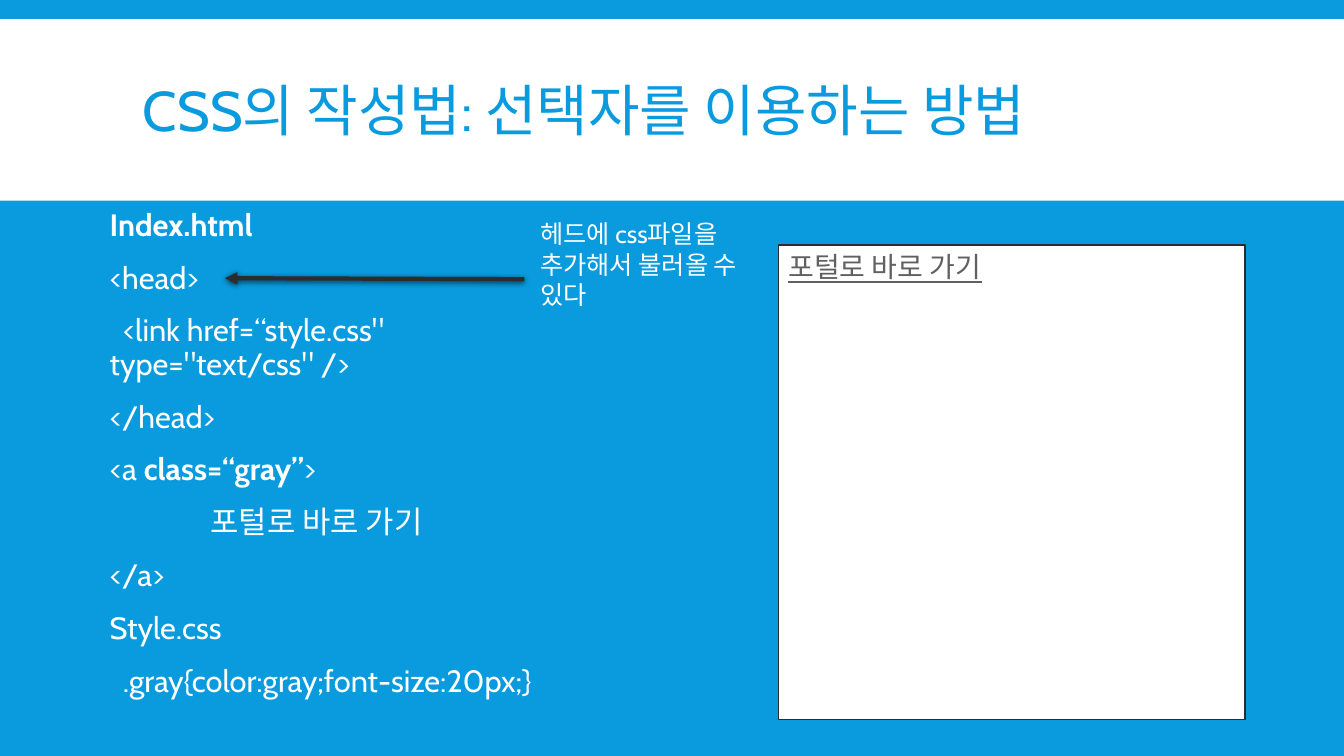
from dataclasses import dataclass

from lxml.etree import SubElement
from pptx import Presentation
from pptx.dml.color import RGBColor
from pptx.enum.shapes import MSO_CONNECTOR, MSO_SHAPE
from pptx.enum.text import MSO_ANCHOR, PP_ALIGN
from pptx.oxml.ns import qn
from pptx.shapes.autoshape import Shape
from pptx.slide import Slide
from pptx.util import Inches, Pt

FONT = "Cabin"
BLUE, WHITE, DARK, GRAY = "099BDD", "FFFFFF", "2C2C2C", "616161"
LINK_TEXT = "포털로 바로 가기"


@dataclass(frozen=True)
class Box:
    left: float
    top: float
    width: float
    height: float

    def lengths(self) -> list[Inches]:
        return [Inches(v) for v in (self.left, self.top, self.width, self.height)]


@dataclass(frozen=True)
class Run:
    text: str
    bold: bool = False


@dataclass(frozen=True)
class Line:
    runs: tuple[Run, ...]
    indent: float = 0


CODE_LINES = [
    Line((Run("Index.html", bold=True),)),
    Line((Run("<head>"),)),
    Line((Run('<link href=“style.css" type="text/css" />'),), indent=0.13),
    Line((Run("</head>"),)),
    Line((Run("<a "), Run("class=“gray”", bold=True), Run(">"))),
    Line((Run(LINK_TEXT),), indent=1),
    Line((Run("</a>"),)),
    Line((Run("Style.css"),)),
    Line((Run(".gray{color:gray;font-size:20px;}"),), indent=0.13),
]


def rgb(color: str) -> RGBColor:
    return RGBColor.from_string(color)


def write(shape: Shape, lines: list[Line], *, size: float, color: str = WHITE,
          anchor: MSO_ANCHOR = MSO_ANCHOR.TOP, spacing: float = 1, before: float = 0,
          after: float = 0, underline: bool = False) -> None:
    frame = shape.text_frame
    frame.word_wrap = True
    frame.vertical_anchor = anchor
    for index, line in enumerate(lines):
        paragraph = frame.add_paragraph() if index else frame.paragraphs[0]
        paragraph.alignment = PP_ALIGN.LEFT
        paragraph.line_spacing = spacing
        paragraph.space_before, paragraph.space_after = Pt(before), Pt(after)
        if line.indent:
            paragraph._p.get_or_add_pPr().set("indent", str(Inches(line.indent)))
        for part in line.runs:
            run = paragraph.add_run()
            run.text = part.text
            font = run.font
            font.name, font.size, font.bold = FONT, Pt(size), part.bold
            font.underline = underline
            font.color.rgb = rgb(color)


def add_text(slide: Slide, box: Box, lines: list[Line], **text_format) -> None:
    write(slide.shapes.add_textbox(*box.lengths()), lines, **text_format)


def add_panel(slide: Slide, box: Box, border: str | None = None) -> Shape:
    panel = slide.shapes.add_shape(MSO_SHAPE.RECTANGLE, *box.lengths())
    panel.shadow.inherit = False
    panel.fill.solid()
    panel.fill.fore_color.rgb = rgb(WHITE)
    if border:
        panel.line.color.rgb = rgb(border)
        panel.line.width = Pt(1)
    else:
        panel.line.fill.background()
    return panel


def add_shadowed_arrow(slide: Slide, start: tuple[float, float],
                       end: tuple[float, float]) -> None:
    arrow = slide.shapes.add_connector(
        MSO_CONNECTOR.STRAIGHT, *(Inches(v) for v in (*start, *end)))
    arrow.line.color.rgb = rgb(DARK)
    arrow.line.width = Pt(3)
    SubElement(arrow.line._get_or_add_ln(), qn("a:tailEnd"), type="triangle")
    effects = SubElement(arrow._element.spPr, qn("a:effectLst"))
    shadow = SubElement(effects, qn("a:outerShdw"), blurRad=str(Pt(4)),
                        dist=str(Pt(1.2)), dir="5400000", rotWithShape="0")
    shade = SubElement(shadow, qn("a:srgbClr"), val="000000")
    SubElement(shade, qn("a:alpha"), val="68000")


def main() -> None:
    presentation = Presentation()
    presentation.slide_width, presentation.slide_height = Inches(13.33), Inches(7.5)
    slide = presentation.slides.add_slide(presentation.slide_layouts[6])
    slide.background.fill.solid()
    slide.background.fill.fore_color.rgb = rgb(BLUE)

    add_panel(slide, Box(0, 0.19, 13.33, 1.8))
    add_text(slide, Box(1.32, 0.31, 10.7, 1.65),
             [Line((Run("CSS의 작성법: 선택자를 이용하는 방법"),))],
             size=40, color=BLUE, anchor=MSO_ANCHOR.MIDDLE, spacing=0.85)
    add_text(slide, Box(0.99, 2.03, 5, 5.32), CODE_LINES,
             size=22, spacing=0.9, before=12, after=2)
    add_shadowed_arrow(slide, (5.2, 2.77), (2.23, 2.76))
    add_text(slide, Box(5.26, 2.12, 2.48, 1.01),
             [Line((Run("헤드에 css파일을 추가해서 불러올 수 있다"),))], size=18)
    browser_view = add_panel(slide, Box(7.72, 2.43, 4.63, 4.71), border=DARK)
    write(browser_view, [Line((Run(LINK_TEXT),))], size=20, color=GRAY, underline=True)

    presentation.save("out.pptx")


if __name__ == "__main__":
    main()
